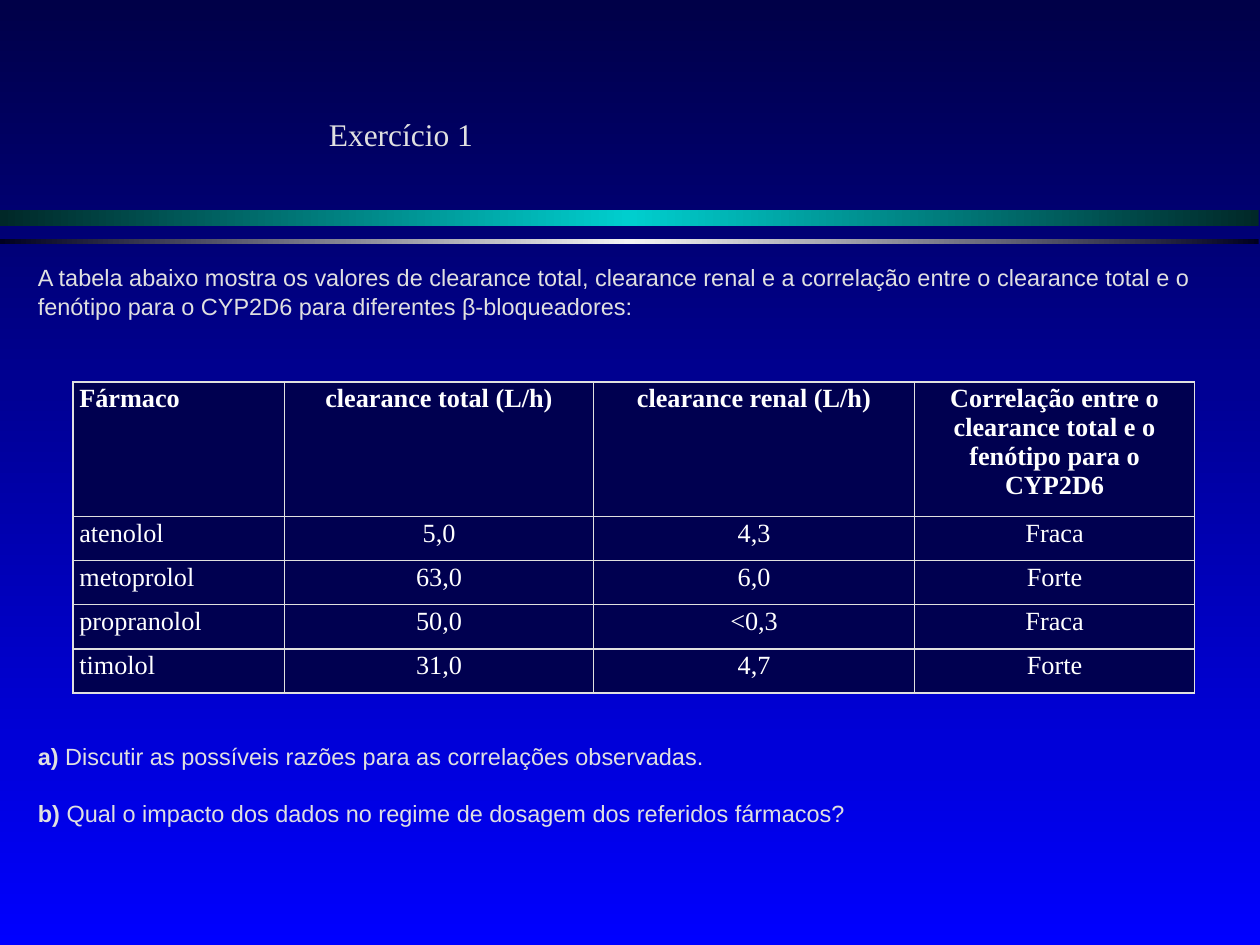
from dataclasses import dataclass

from lxml import etree
from pptx import Presentation
from pptx import util as u
from pptx.dml.color import RGBColor
from pptx.enum import shapes, text
from pptx.oxml.ns import qn


@dataclass
class Theme:
    ink: str = "E0E0E0"
    cell_ink: str = "FFFFFF"
    cell_fill: str = "000050"
    sky: tuple = ("000048", "0000FF")
    teal_bar: tuple = ("002828", "00CECE", "002828")
    silver_bar: tuple = ("000020", "F3F3F3", "000020")
    serif: str = "Times New Roman"
    sans: str = "Arial"
    title_size: float = 18
    body_size: float = 13.4
    body_line: float = 16.1
    table_size: float = 15


class Builder:
    """Draws the elements of one page in a shared style."""

    def __init__(self, deck, theme):
        self.theme = theme
        self.page = deck.slides.add_slide(deck.slide_layouts[1])

    def gradient(self, owner, fill, colors, angle):
        fill.gradient()
        fill.gradient_angle = angle
        stops = owner.element.find(".//" + qn("a:gsLst"))
        for stop in list(stops):
            stops.remove(stop)
        for i, color in enumerate(colors):
            position = str(100000 * i // (len(colors) - 1))
            stop = etree.SubElement(stops, qn("a:gs"), pos=position)
            etree.SubElement(stop, qn("a:srgbClr"), val=color)

    def background(self):
        self.gradient(self.page, self.page.background.fill, self.theme.sky, 270)

    def bar(self, top, height, colors):
        bar = self.page.shapes.add_shape(
            shapes.MSO_SHAPE.RECTANGLE, 0, u.Inches(top), u.Inches(9.99), u.Inches(height))
        bar.shadow.inherit = False
        bar.line.fill.background()
        self.gradient(bar, bar.fill, colors, 0)

    def place(self, box, left, top, width, height, **frame_format):
        places = dict(left=left, top=top, width=width, height=height)
        for name, value in places.items():
            setattr(box, name, u.Inches(value))
        for name, value in frame_format.items():
            setattr(box.text_frame, name, value)
        return box.text_frame

    def span(self, para, words, font, size, color, bold=False):
        span = para.add_run()
        span.text = words
        for name, value in dict(name=font, size=u.Pt(size), bold=bold).items():
            setattr(span.font, name, value)
        span.font.color.rgb = RGBColor.from_string(color)

    def title(self, words, *place):
        frame = self.place(self.page.shapes.title, *place, word_wrap=False,
                           auto_size=text.MSO_AUTO_SIZE.NONE,
                           vertical_anchor=text.MSO_ANCHOR.MIDDLE)
        para = frame.paragraphs[0]
        para.alignment = text.PP_ALIGN.LEFT
        self.span(para, words, self.theme.serif, self.theme.title_size, self.theme.ink)

    def body(self, entries, *place):
        theme = self.theme
        frame = self.place(self.page.placeholders[1], *place, word_wrap=True,
                           auto_size=text.MSO_AUTO_SIZE.NONE,
                           vertical_anchor=text.MSO_ANCHOR.TOP)
        for i, (blank_lines, label, words) in enumerate(entries):
            para = frame.add_paragraph() if i else frame.paragraphs[0]
            spacing = dict(line_spacing=u.Pt(theme.body_line), space_after=u.Pt(0),
                           space_before=u.Pt(blank_lines * theme.body_line))
            for name, value in spacing.items():
                setattr(para, name, value)
            properties = para._p.get_or_add_pPr()
            properties.set("marL", "0")
            properties.set("indent", "0")
            etree.SubElement(properties, qn("a:buNone"))
            if label:
                self.span(para, label, theme.sans, theme.body_size, theme.ink, True)
            self.span(para, words, theme.sans, theme.body_size, theme.ink)

    def borders(self, cell):
        properties = cell._tc.get_or_add_tcPr()
        for i, side in enumerate(("lnL", "lnR", "lnT", "lnB")):
            line = etree.Element(qn("a:" + side), w=str(u.Pt(1)))
            paint = etree.SubElement(line, qn("a:solidFill"))
            etree.SubElement(paint, qn("a:srgbClr"), val=self.theme.ink)
            properties.insert(i, line)

    def table(self, rows, left, top, widths, heights):
        theme = self.theme
        table = self.page.shapes.add_table(
            len(rows), len(widths), u.Inches(left), u.Inches(top),
            u.Inches(sum(widths)), u.Inches(sum(heights))).table
        table.horz_banding = False
        for column, width in zip(table.columns, widths):
            column.width = u.Inches(width)
        margins = dict(margin_left=0.05, margin_right=0.05, margin_top=0.02, margin_bottom=0.02)
        for r, (row, height) in enumerate(zip(rows, heights)):
            table.rows[r].height = u.Inches(height)
            for c, words in enumerate(row):
                cell = table.cell(r, c)
                for name, value in margins.items():
                    setattr(cell, name, u.Inches(value))
                cell.fill.solid()
                cell.fill.fore_color.rgb = RGBColor.from_string(theme.cell_fill)
                self.borders(cell)
                para = cell.text_frame.paragraphs[0]
                para.alignment = text.PP_ALIGN.CENTER if c else text.PP_ALIGN.LEFT
                self.span(para, words, theme.serif, theme.table_size, theme.cell_ink, r == 0)


def main():
    deck = Presentation()
    deck.slide_width, deck.slide_height = u.Inches(10), u.Inches(7.5)
    theme = Theme()
    page = Builder(deck, theme)
    page.background()
    page.bar(1.67, 0.12, theme.teal_bar)
    page.bar(1.9, 0.04, theme.silver_bar)
    page.title("Exercício 1", 2.51, 0.86, 1.36, 0.4)
    page.body([
        (0, "", "A tabela abaixo mostra os valores de clearance total, clearance renal e a "
                "correlação entre o clearance total e o fenótipo para o CYP2D6 para "
                "diferentes β-bloqueadores:"),
        (15, "a) ", "Discutir as possíveis razões para as correlações observadas."),
        (1, "b) ", "Qual o impacto dos dados no regime de dosagem dos referidos fármacos?"),
    ], 0.2, 2.04, 9.67, 4.63)
    page.table([
        ("Fármaco", "clearance total (L/h)", "clearance renal (L/h)",
         "Correlação entre o clearance total e o fenótipo para o CYP2D6"),
        ("atenolol", "5,0", "4,3", "Fraca"),
        ("metoprolol", "63,0", "6,0", "Forte"),
        ("propranolol", "50,0", "<0,3", "Fraca"),
        ("timolol", "31,0", "4,7", "Forte"),
    ], 0.58, 3.03, (1.68, 2.45, 2.55, 2.22), (1.07,) + (0.35,) * 4)
    deck.save("out.pptx")


if __name__ == "__main__":
    main()
